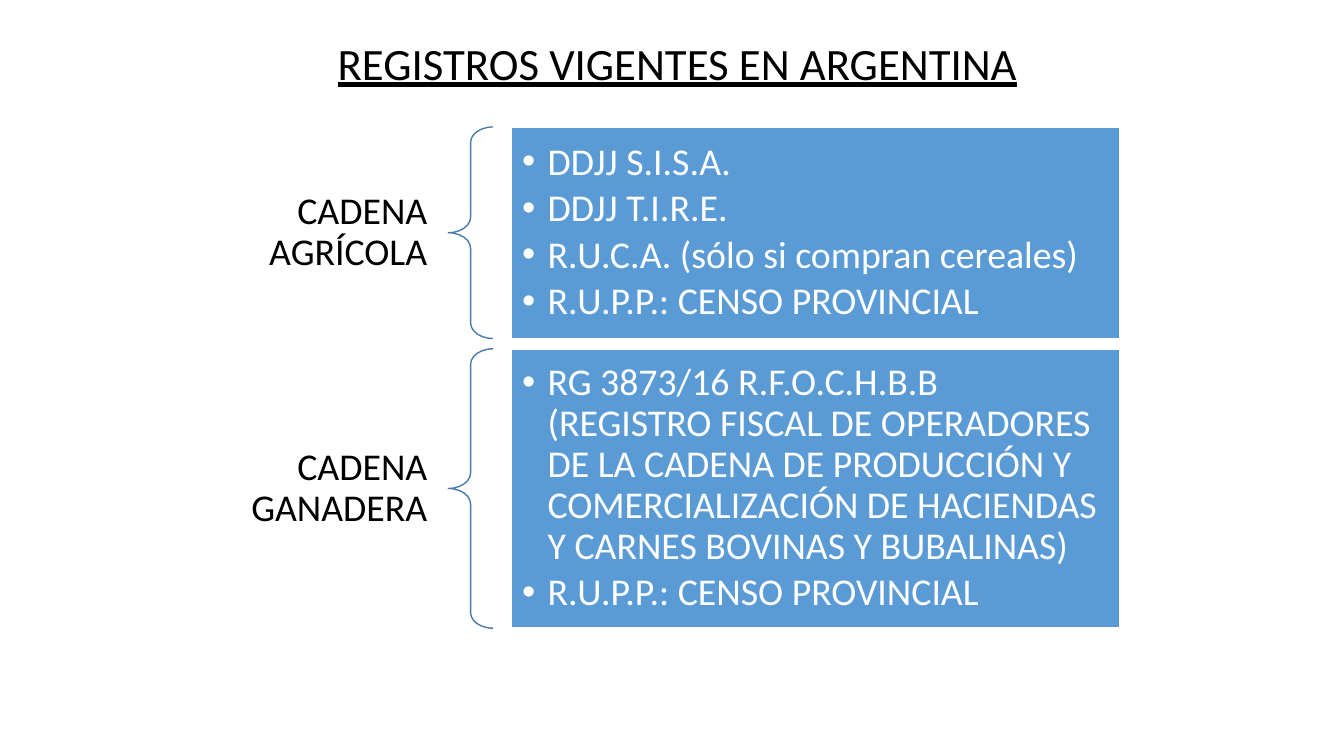
import pptx
import pptx.util
import pptx.dml.color
import pptx.enum.shapes
import pptx.enum.text
import pptx.oxml
import pptx.oxml.ns

Cm = pptx.util.Cm
Pt = pptx.util.Pt
RGBColor = pptx.dml.color.RGBColor
PP_ALIGN = pptx.enum.text.PP_ALIGN
MSO_ANCHOR = pptx.enum.text.MSO_ANCHOR

BLACK = RGBColor(0x00, 0x00, 0x00)
WHITE = RGBColor(0xFF, 0xFF, 0xFF)
BLUE = RGBColor(0x5B, 0x9B, 0xD5)
BRACE_BLUE = RGBColor(0x49, 0x7C, 0xAB)


def write(sp, text, size=27, color=BLACK, align=PP_ALIGN.LEFT, anchor=MSO_ANCHOR.MIDDLE,
          inset=(0.28, 0.28), spacing=0.9, after=0, underline=None, bullet=False):
    tf = sp.text_frame
    tf.text = text
    tf.word_wrap = True
    tf.auto_size = pptx.enum.text.MSO_AUTO_SIZE.NONE
    tf.vertical_anchor = anchor
    tf.margin_left = tf.margin_right = Cm(inset[0])
    tf.margin_top = tf.margin_bottom = Cm(inset[1])
    for p in tf.paragraphs:
        p.alignment = align
        p.line_spacing = spacing
        p.space_before = Pt(0)
        p.space_after = Pt(after)
        r = p.runs[0]
        r.font.name = "Calibri"
        r.font.size = Pt(size)
        r.font.color.rgb = color
        r.font.underline = underline
        if bullet:
            pPr = p._p.get_or_add_pPr()
            pPr.set("marL", str(Cm(0.64)))
            pPr.set("indent", str(-Cm(0.64)))
            bu = pptx.oxml.parse_xml(
                '<a:buChar %s char="•"/>' % pptx.oxml.ns.nsdecls("a"))
            pPr.append(bu)


prs = pptx.Presentation()
prs.slide_width = Cm(33.87)
prs.slide_height = Cm(19.05)
s = prs.slides.add_slide(prs.slide_layouts[3])

title = s.shapes.title
title.left, title.top, title.width, title.height = Cm(8.26), Cm(0.76), Cm(18.49), Cm(1.63)
write(title, "REGISTROS VIGENTES EN ARGENTINA", size=32, anchor=MSO_ANCHOR.TOP,
      inset=(0.25, 0.13), spacing=1.0, underline=True)

chains = [
    ("CADENA AGRÍCOLA", 5.33, [
        "DDJJ S.I.S.A.",
        "DDJJ T.I.R.E.",
        "R.U.C.A. (sólo si compran cereales)",
        "R.U.P.P.: CENSO PROVINCIAL",
    ]),
    ("CADENA GANADERA", 7.04, [
        "RG 3873/16 R.F.O.C.H.B.B (REGISTRO FISCAL DE OPERADORES DE LA CADENA "
        "DE PRODUCCIÓN Y COMERCIALIZACIÓN DE HACIENDAS Y CARNES BOVINAS Y BUBALINAS)",
        "R.U.P.P.: CENSO PROVINCIAL",
    ]),
]
label_height = 2.51
gap = 0.26
top = 3.2

for idx, (name, height, records) in enumerate(chains, start=1):
    label_top = top + (height - label_height) / 2
    label = s.shapes.add_textbox(Cm(5.66), Cm(label_top), Cm(5.64), Cm(label_height))
    write(label, name, align=PP_ALIGN.RIGHT, inset=(0.53, 0.18))

    brace = s.shapes.add_shape(pptx.enum.shapes.MSO_SHAPE.LEFT_BRACE,
                               Cm(11.3), Cm(top), Cm(1.12), Cm(height))
    brace.adjustments[0] = 0.35
    brace.adjustments[1] = 0.5
    brace.shadow.inherit = False
    brace.fill.background()
    brace.line.color.rgb = BRACE_BLUE
    brace.line.width = Pt(1)

    body = s.placeholders[idx]
    body.left, body.top, body.width, body.height = Cm(12.88), Cm(top), Cm(15.34), Cm(height)
    body.fill.solid()
    body.fill.fore_color.rgb = BLUE
    body.line.color.rgb = WHITE
    body.line.width = Pt(1)
    write(body, "\n".join(records), color=WHITE, after=4, bullet=True)

    top += height + gap

prs.save("out.pptx")
